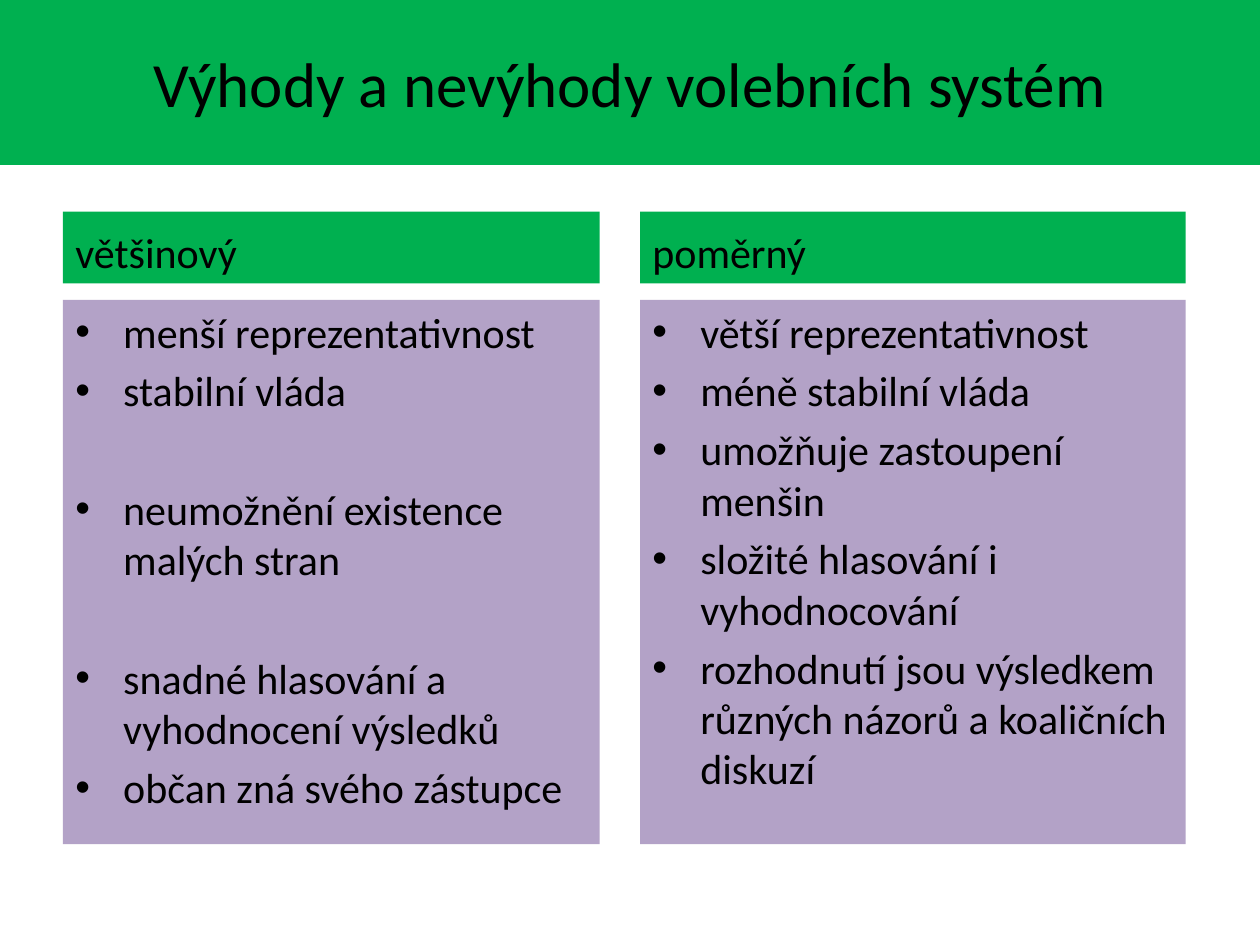
from dataclasses import dataclass

from lxml.etree import SubElement
from pptx import Presentation
from pptx.dml.color import RGBColor
from pptx.enum.shapes import MSO_SHAPE as Shape
from pptx.enum.text import MSO_ANCHOR as Anchor, PP_ALIGN as Align
from pptx.oxml.ns import qn
from pptx.util import Inches, Pt

COLORS = {"green": "00B050", "purple": "B3A2C7", "text": "000000"}
FONT = "Calibri"
BODY_SIZE = 24
HEADING_TOP, HEADING_HEIGHT = 1.68, 0.57
LIST_TOP, LIST_HEIGHT = 2.38, 4.32
BULLET_INDENT = Inches(0.38)
SPACE_BEFORE = 4.8  # 20 % of the body size
GROUP_SPACE = 38.9  # one extra line between groups


@dataclass
class Column:
    left: float
    width: float
    heading: str
    groups: list[list[str]]


COLUMNS = [
    Column(0.5, 4.26, "většinový", [
        ["menší reprezentativnost", "stabilní vláda"],
        ["neumožnění existence malých stran"],
        ["snadné hlasování a vyhodnocení výsledků", "občan zná svého zástupce"],
    ]),
    Column(5.08, 4.33, "poměrný", [
        ["větší reprezentativnost", "méně stabilní vláda",
         "umožňuje zastoupení menšin", "složité hlasování i vyhodnocování",
         "rozhodnutí jsou výsledkem různých názorů a koaličních diskuzí"],
    ]),
]


def add_box(page, left: float, top: float, width: float, height: float,
            color: str, anchor: Anchor):
    """Add a plain filled rectangle and return its text frame."""
    box = page.shapes.add_shape(Shape.RECTANGLE, Inches(left), Inches(top),
                                Inches(width), Inches(height))
    box.shadow.inherit = False
    box.fill.solid()
    box.fill.fore_color.rgb = RGBColor.from_string(COLORS[color])
    box.line.fill.background()
    box.text_frame.word_wrap = True
    box.text_frame.vertical_anchor = anchor
    return box.text_frame


def write(para, text: str, size: float, align: Align = Align.LEFT,
          space_before: float = 0) -> None:
    para.text = text
    para.alignment = align
    para.space_before = Pt(space_before)
    for span in para.runs:
        span.font.name = FONT
        span.font.size = Pt(size)
        span.font.color.rgb = RGBColor.from_string(COLORS["text"])


def add_bullet(para) -> None:
    """Give a paragraph a hanging round bullet."""
    properties = para._p.get_or_add_pPr()
    properties.set("marL", str(BULLET_INDENT))
    properties.set("indent", str(-BULLET_INDENT))
    SubElement(properties, qn("a:buFont")).set("typeface", "Arial")
    SubElement(properties, qn("a:buChar")).set("char", "•")


def draw_column(page, column: Column) -> None:
    # Heading
    heading = add_box(page, column.left, HEADING_TOP, column.width,
                      HEADING_HEIGHT, "green", Anchor.BOTTOM)
    write(heading.paragraphs[0], column.heading, BODY_SIZE,
          space_before=SPACE_BEFORE)

    # Bulleted list
    frame = add_box(page, column.left, LIST_TOP, column.width,
                    LIST_HEIGHT, "purple", Anchor.TOP)
    for group_index, group in enumerate(column.groups):
        for item_index, item in enumerate(group):
            first = group_index == item_index == 0
            para = frame.paragraphs[0] if first else frame.add_paragraph()
            opens_group = group_index > 0 and item_index == 0
            write(para, item, BODY_SIZE,
                  space_before=GROUP_SPACE if opens_group else SPACE_BEFORE)
            add_bullet(para)


def main() -> None:
    deck = Presentation()
    deck.slide_width, deck.slide_height = Inches(10), Inches(7.5)
    page = deck.slides.add_slide(deck.slide_layouts[6])

    # Title band
    title = add_box(page, 0, 0, 10, 1.31, "green", Anchor.MIDDLE)
    write(title.paragraphs[0], "Výhody a nevýhody volebních systém", 36,
          Align.CENTER)

    for column in COLUMNS:
        draw_column(page, column)
    deck.save("out.pptx")


if __name__ == "__main__":
    main()
